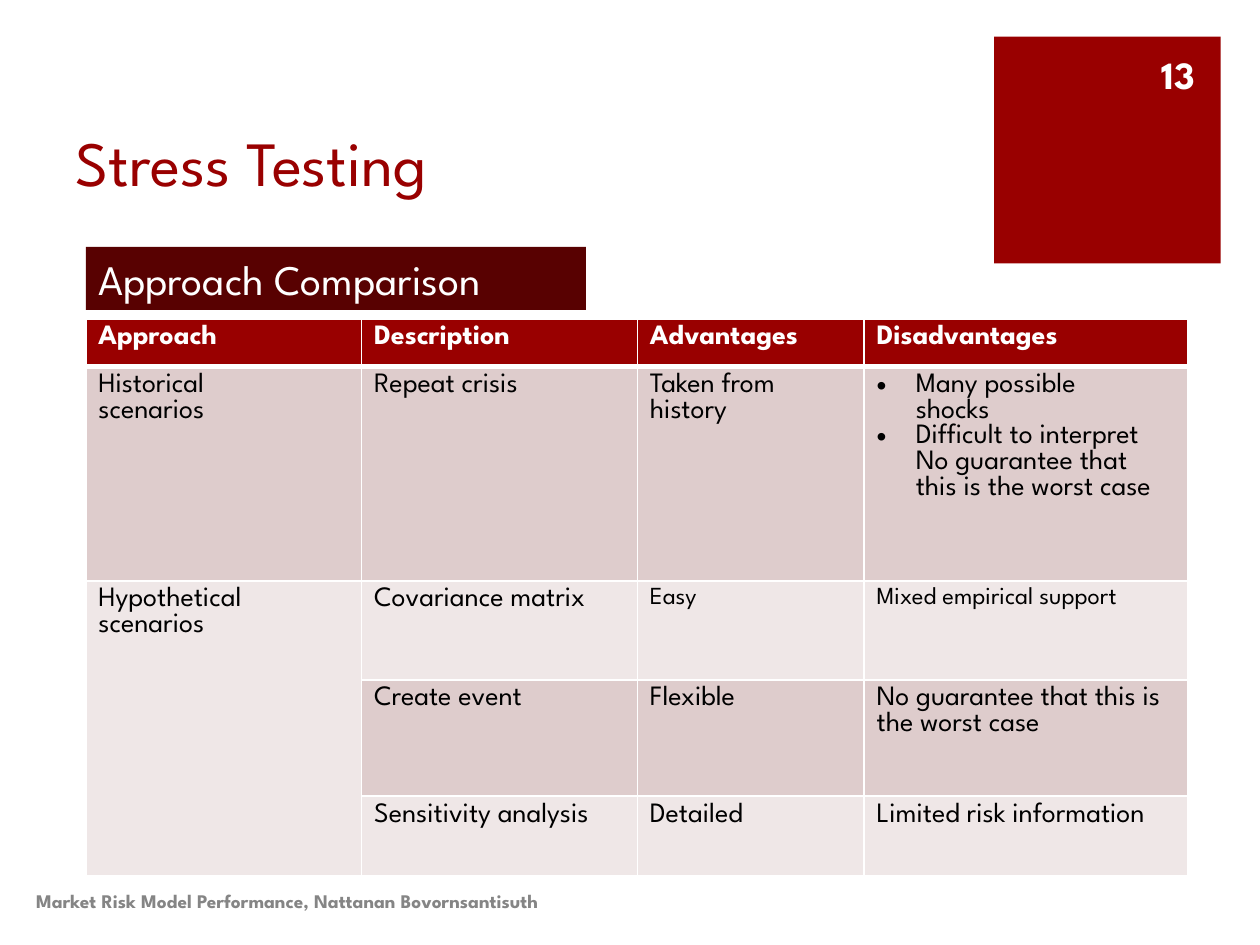
from lxml import etree
from pptx import Presentation
from pptx.dml.color import RGBColor
from pptx.enum.shapes import MSO_SHAPE
from pptx.enum.text import MSO_ANCHOR, PP_ALIGN
from pptx.oxml import parse_xml
from pptx.oxml.ns import nsdecls, qn
from pptx.util import Cm, Pt

RECT = MSO_SHAPE.RECTANGLE
TOP, MIDDLE, BOTTOM = MSO_ANCHOR.TOP, MSO_ANCHOR.MIDDLE, MSO_ANCHOR.BOTTOM
LEFT, RIGHT = PP_ALIGN.LEFT, PP_ALIGN.RIGHT

FONT = "League Spartan"
RED = RGBColor(0x99, 0x00, 0x00)
DARK_RED = RGBColor(0x58, 0x01, 0x01)
ROSE = RGBColor(0xDE, 0xCC, 0xCC)
PALE_ROSE = RGBColor(0xEF, 0xE7, 0xE7)
GREY = RGBColor(0x85, 0x85, 0x85)
WHITE = RGBColor(0xFF, 0xFF, 0xFF)
BLACK = RGBColor(0x00, 0x00, 0x00)

COLUMNS = (5.56, 5.56, 4.57, 6.52)
ROWS = (0.96, 4.32, 2.0, 2.34, 1.6)
ROW_FILLS = (RED, ROSE, PALE_ROSE, ROSE, PALE_ROSE)
# A tuple holds the bullet points of a cell; "\v" is a line break.
CELLS = (
    ("Approach", "Description", "Advantages", "Disadvantages"),
    ("Historical\vscenarios", "Repeat crisis", "Taken from history",
     ("Many possible\vshocks",
      "Difficult to interpret\vNo guarantee that this is the worst case")),
    ("Hypothetical\vscenarios", "Covariance matrix", "Easy",
     "Mixed empirical support"),
    ("", "Create event", "Flexible", "No guarantee that this is the worst case"),
    ("", "Sensitivity analysis", "Detailed", "Limited risk information"),
)
SMALL_CELLS = {(2, 2), (2, 3)}


def format_paragraph(p, size, color, bold=False, align=LEFT):
    p.alignment = align
    for r in p.runs:
        r.font.name = FONT
        r.font.size = Pt(size)
        r.font.bold = bold
        r.font.color.rgb = color


def write(sp, text, size, color, bold=False, align=LEFT, anchor=TOP):
    tf = sp.text_frame
    tf.word_wrap = True
    tf.vertical_anchor = anchor
    tf.text = text
    format_paragraph(tf.paragraphs[0], size, color, bold, align)


def add_block(s, box, color):
    sp = s.shapes.add_shape(RECT, *map(Cm, box))
    sp.shadow.inherit = False
    sp.fill.solid()
    sp.fill.fore_color.rgb = color
    sp.line.fill.background()
    return sp


def add_number_block(s, left, top, side):
    add_block(s, (left, top, side, side), RED)
    box = (left + 2.9, top + 0.25, 1.4, 1.02)
    write(s.shapes.add_textbox(*map(Cm, box)), "13", 22, WHITE, True, RIGHT, MIDDLE)


def place_title(s, left, top, width, height):
    sp = s.shapes.title
    sp.left, sp.top, sp.width, sp.height = map(Cm, (left, top, width, height))
    write(sp, "Stress Testing", 36, RED, anchor=BOTTOM)


def add_footer(s, *box):
    write(s.shapes.add_textbox(*map(Cm, box)),
          "Market Risk Model Performance, Nattanan Bovornsantisuth",
          11, GREY, True, anchor=MIDDLE)


def add_bullet(p):
    pPr = p._p.get_or_add_pPr()
    pPr.set("marL", str(Cm(0.79)))
    pPr.set("indent", str(-Cm(0.79)))
    etree.SubElement(pPr, qn("a:buFont"), typeface="Arial")
    etree.SubElement(pPr, qn("a:buChar"), char="•")


def add_borders(cell, widths):
    """Draw white borders; widths maps each side (L, R, T, B) to points."""
    tcPr = cell._tc.get_or_add_tcPr()
    for side, width in widths.items():
        tcPr.append(parse_xml(
            f'<a:ln{side} {nsdecls("a")} w="{Pt(width)}"><a:solidFill>'
            f'<a:srgbClr val="{WHITE}"/></a:solidFill></a:ln{side}>'))


def fill_cell(cell, row, column):
    header = row == 0
    add_borders(cell, {"L": 1, "R": 1, "T": 3 if row == 1 else 1,
                       "B": 3 if header else 1})
    cell.fill.solid()
    cell.fill.fore_color.rgb = ROW_FILLS[row]
    content = CELLS[row][column]
    if not content:
        return
    bulleted = isinstance(content, tuple)
    cell.text = "\n".join(content) if bulleted else content
    size = 14 if (row, column) in SMALL_CELLS else 16
    for p in cell.text_frame.paragraphs:
        format_paragraph(p, size, WHITE if header else BLACK, header)
        if bulleted:
            add_bullet(p)


def add_comparison(s, left, top):
    """Place the caption bar with the comparison table under it."""
    bar = add_block(s, (left, top, 10.08, 1.27), DARK_RED)
    write(bar, "Approach Comparison", 24, WHITE)
    box = (left, top + 1.45, sum(COLUMNS), sum(ROWS))
    table = s.shapes.add_table(len(ROWS), len(COLUMNS), *map(Cm, box)).table
    for column, width in zip(table.columns, COLUMNS):
        column.width = Cm(width)
    for row, height in zip(table.rows, ROWS):
        row.height = Cm(height)
    for i in range(len(ROWS)):
        for j in range(len(COLUMNS)):
            fill_cell(table.cell(i, j), i, j)
    table.cell(2, 0).merge(table.cell(4, 0))


def main():
    prs = Presentation()
    prs.slide_width, prs.slide_height = Cm(25.4), Cm(19.05)
    s = prs.slides.add_slide(prs.slide_layouts[5])
    add_number_block(s, 20.04, 0.74, 4.57)
    place_title(s, 1.27, 0.97, 18.08, 3.18)
    add_footer(s, 0.48, 17.65, 16.69, 1.02)
    add_comparison(s, 1.73, 4.98)
    prs.save("out.pptx")


if __name__ == "__main__":
    main()
